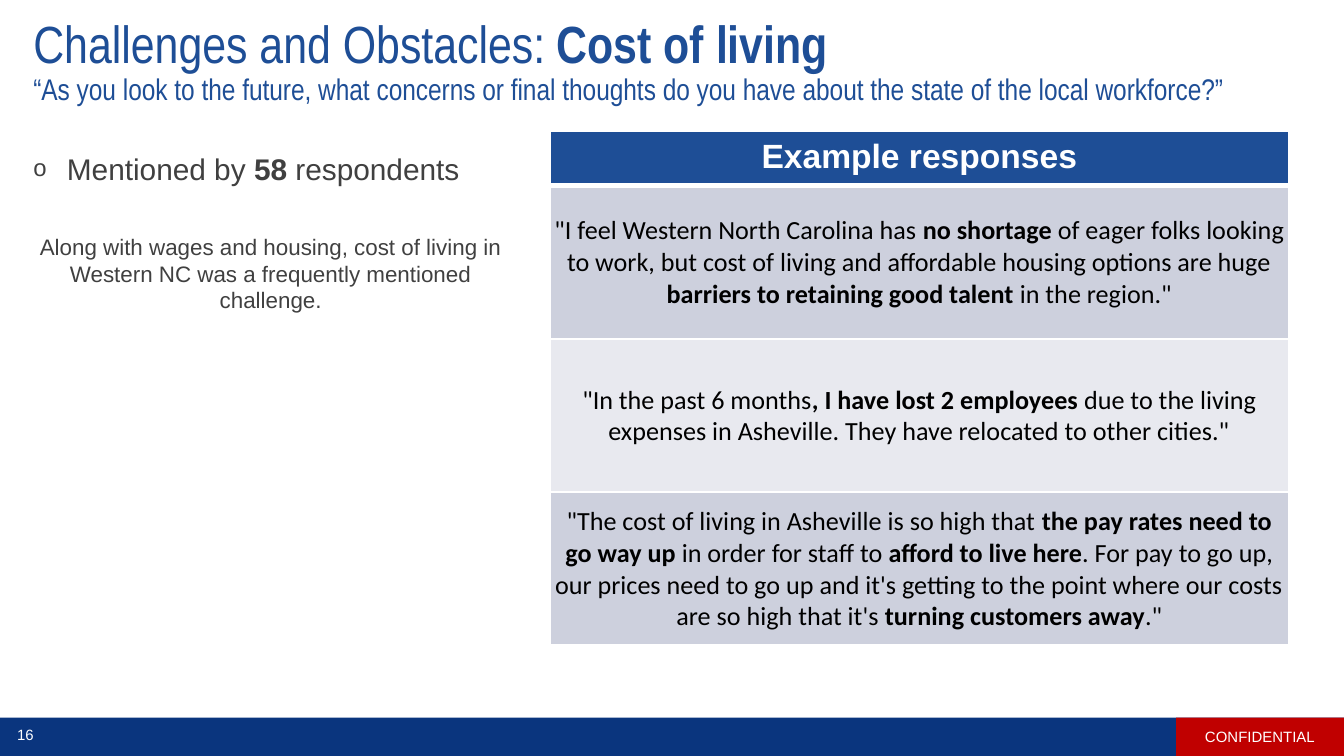
from dataclasses import dataclass

import lxml.etree
import pptx
import pptx.dml.color
import pptx.enum.shapes
import pptx.enum.text
import pptx.oxml.ns
import pptx.util

RGBColor = pptx.dml.color.RGBColor
Align = pptx.enum.text.PP_ALIGN
Anchor = pptx.enum.text.MSO_ANCHOR

NAVY = RGBColor(0x0A, 0x35, 0x7E)
RED = RGBColor(0xC0, 0x00, 0x00)
BLUE = RGBColor(0x1E, 0x4E, 0x96)
WHITE = RGBColor(0xFF, 0xFF, 0xFF)
BLACK = RGBColor(0x00, 0x00, 0x00)
GREY = RGBColor(0x40, 0x40, 0x40)
BAND_DARK = RGBColor(0xCD, 0xD0, 0xDD)
BAND_LIGHT = RGBColor(0xE8, 0xE9, 0xEF)

SLIDE_W = pptx.util.Inches(10)
SLIDE_H = pptx.util.Inches(5.625)


@dataclass(frozen=True)
class Box:
    left: float
    top: float
    width: float
    height: float

    def emu(self) -> tuple[int, int, int, int]:
        return (across(self.left), down(self.top), across(self.width), down(self.height))


@dataclass(frozen=True)
class Run:
    text: str
    bold: bool = False
    size: float | None = None


@dataclass(frozen=True)
class Style:
    font: str
    size: float
    color: RGBColor
    align: Align = Align.LEFT
    before: float = 0
    spacing: float = 1.0
    bullet: str = ""


@dataclass(frozen=True)
class Row:
    height: float
    fill: RGBColor
    style: Style
    runs: list[Run]
    margins: tuple[float, float, float, float]
    anchor: Anchor
    top_line: float
    bottom_line: float


def across(percent: float) -> int:
    return round(SLIDE_W * percent / 100)


def down(percent: float) -> int:
    return round(SLIDE_H * percent / 100)


def add_xml(parent, tag: str, **attributes: str):
    return lxml.etree.SubElement(parent, pptx.oxml.ns.qn(tag), **attributes)


def write(p, runs: list[Run], style: Style) -> None:
    if style.bullet:
        pPr = p._p.get_or_add_pPr()
        indent = pptx.util.Inches(0.25)
        pPr.set("marL", str(indent))
        pPr.set("indent", str(-indent))
        add_xml(pPr, "a:buSzPct", val="80000")
        add_xml(pPr, "a:buFont", typeface=style.font)
        add_xml(pPr, "a:buChar", char=style.bullet)
    p.alignment = style.align
    p.line_spacing = style.spacing
    p.space_before = pptx.util.Pt(style.before)
    p.font.name = style.font
    p.font.size = pptx.util.Pt(style.size)
    p.font.color.rgb = style.color
    for run in runs:
        if run.text == "\n":
            p.add_line_break()
            continue
        r = p.add_run()
        r.text = run.text
        r.font.bold = run.bold
        if run.size:
            r.font.size = pptx.util.Pt(run.size)


def add_text(s, box: Box, anchor: Anchor):
    tf = s.shapes.add_textbox(*box.emu()).text_frame
    tf.word_wrap = True
    tf.vertical_anchor = anchor
    return tf


def add_bar(s, box: Box, color: RGBColor):
    sp = s.shapes.add_shape(pptx.enum.shapes.MSO_SHAPE.RECTANGLE, *box.emu())
    sp.shadow.inherit = False
    sp.fill.solid()
    sp.fill.fore_color.rgb = color
    sp.line.fill.background()
    sp.text_frame.vertical_anchor = Anchor.MIDDLE
    return sp.text_frame


def fill_cell(cell, row: Row) -> None:
    tcPr = cell._tc.get_or_add_tcPr()
    widths = {"a:lnL": 1, "a:lnR": 1, "a:lnT": row.top_line, "a:lnB": row.bottom_line}
    for tag, width in widths.items():
        line = add_xml(tcPr, tag, w=str(pptx.util.Pt(width)))
        add_xml(add_xml(line, "a:solidFill"), "a:srgbClr", val=str(WHITE))
    cell.fill.solid()
    cell.fill.fore_color.rgb = row.fill
    cell.vertical_anchor = row.anchor
    cell.margin_left, cell.margin_top, cell.margin_right, cell.margin_bottom = (
        pptx.util.Inches(m) for m in row.margins
    )
    write(cell.text_frame.paragraphs[0], row.runs, row.style)


def add_responses(s, box: Box, rows: list[Row]) -> None:
    table = s.shapes.add_table(len(rows), 1, *box.emu()).table
    table.horz_banding = False
    for i, row in enumerate(rows):
        table.rows[i].height = down(row.height)
        fill_cell(table.cell(i, 0), row)


def quote_row(i: int, runs: list[Run]) -> Row:
    return Row(20.27, BAND_LIGHT if i % 2 else BAND_DARK,
               Style("Calibri", 14, BLACK, Align.CENTER), runs,
               (0.01, 0.01, 0.01, 0), Anchor.MIDDLE, 1 if i else 3, 1)


QUOTES = [
    [Run('"I feel Western North Carolina has '), Run("no shortage ", True),
     Run("of eager folks looking to work, but cost of living and affordable housing options are huge "),
     Run("barriers to retaining good talent ", True), Run('in the region."')],
    [Run('"In the past 6 months'), Run(", I have lost 2 employees ", True),
     Run('due to the living expenses in Asheville. They have relocated to other cities."')],
    [Run('"The cost of living in Asheville is so high that '),
     Run("the pay rates need to go way up ", True), Run("in order for staff to "),
     Run("afford to live here", True),
     Run(". For pay to go up, our prices need to go up and it's getting to the point "
         "where our costs are so high that it's "),
     Run("turning customers away", True), Run('."')],
]


def main() -> None:
    prs = pptx.Presentation()
    prs.slide_width, prs.slide_height = SLIDE_W, SLIDE_H
    s = prs.slides.add_slide(prs.slide_layouts[6])

    footer = Style("Arial", 8, WHITE, Align.CENTER)
    add_bar(s, Box(0, 94.93, 100, 5.07), NAVY)
    tf = add_bar(s, Box(87.5, 94.93, 12.5, 5.07), RED)
    write(tf.paragraphs[0], [Run("CONFIDENTIAL")], footer)
    tf = add_text(s, Box(0, 95.1, 3.8, 4.27), Anchor.MIDDLE)
    write(tf.paragraphs[0], [Run("16")], footer)

    tf = add_text(s, Box(1.5, 2.67, 96.7, 11.2), Anchor.MIDDLE)
    tf.margin_top = tf.margin_bottom = pptx.util.Inches(0.1)
    tf.margin_right = pptx.util.Inches(0.2)
    write(tf.paragraphs[0],
          [Run("Challenges and Obstacles: "), Run("Cost of living", True), Run("\n"),
           Run("“As you look to the future, what concerns or final thoughts do you have "
               "about the state of the local workforce?”", size=16)],
          Style("Arial Narrow", 28, BLUE, spacing=0.9))

    header = Row(6.93, BLUE, Style("Arial", 18, WHITE, Align.CENTER),
                 [Run("Example responses", True)], (0.1, 0.05, 0.1, 0.05), Anchor.TOP, 1, 3)
    rows = [header] + [quote_row(i, runs) for i, runs in enumerate(QUOTES)]
    add_responses(s, Box(40.9, 17.42, 55, sum(row.height for row in rows)), rows)

    tf = add_text(s, Box(1.5, 19.02, 37.3, 48), Anchor.TOP)
    write(tf.paragraphs[0], [Run("Mentioned by "), Run("58", True), Run(" respondents")],
          Style("Arial", 16, GREY, before=1, bullet="o"))
    write(tf.add_paragraph(),
          [Run("Along with wages and housing, cost of living in Western NC was a "
               "frequently mentioned challenge.")],
          Style("Arial", 12, GREY, Align.CENTER, before=25))

    prs.save("out.pptx")


if __name__ == "__main__":
    main()
